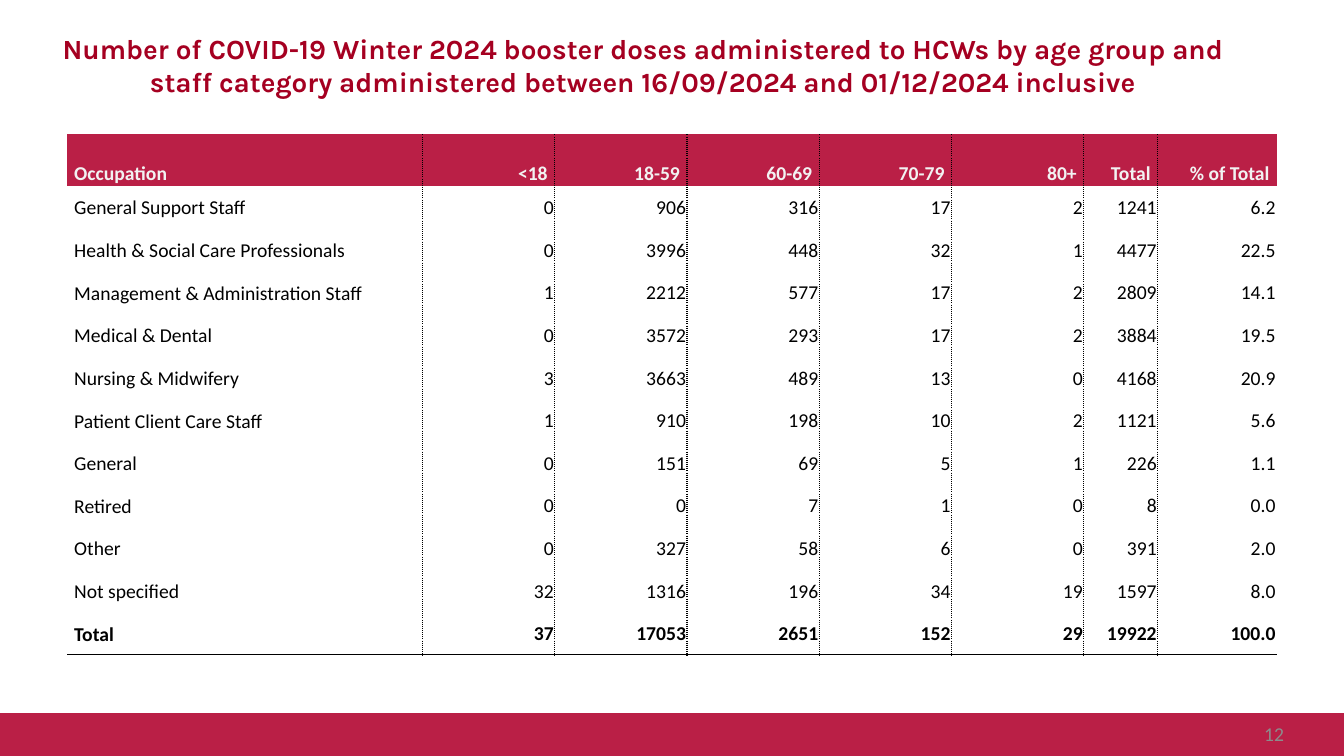
from lxml.etree import SubElement
from pptx import Presentation
from pptx.dml.color import RGBColor
from pptx.enum.shapes import MSO_SHAPE as Shape
from pptx.enum.text import MSO_ANCHOR as Anchor, PP_ALIGN as Align
from pptx.oxml.ns import qn
from pptx.util import Inches, Pt

COLS, ROWS = 160, 90  # square grid, 12 units to the inch
CRIMSON, TITLE_RED, PALE, BLACK, GREY = "BA1F46", "A50021", "F2F2F2", "000000", "8C8C8C"

HEADER = ["Occupation", "<18", "18-59", "60-69", "70-79", "80+", "Total", "% of Total"]
STAFF = [
    ["General Support Staff", 0, 906, 316, 17, 2, 1241, 6.2],
    ["Health & Social Care Professionals", 0, 3996, 448, 32, 1, 4477, 22.5],
    ["Management & Administration Staff", 1, 2212, 577, 17, 2, 2809, 14.1],
    ["Medical & Dental", 0, 3572, 293, 17, 2, 3884, 19.5],
    ["Nursing & Midwifery", 3, 3663, 489, 13, 0, 4168, 20.9],
    ["Patient Client Care Staff", 1, 910, 198, 10, 2, 1121, 5.6],
    ["General", 0, 151, 69, 5, 1, 226, 1.1],
    ["Retired", 0, 0, 7, 1, 0, 8, 0.0],
    ["Other", 0, 327, 58, 6, 0, 391, 2.0],
    ["Not specified", 32, 1316, 196, 34, 19, 1597, 8.0],
    ["Total", 37, 17053, 2651, 152, 29, 19922, 100.0],
]
COL_WIDTHS = [42.3] + [15.75] * 5 + [8.8, 14.15]
HEADER_HEIGHT = 6.15


def rgb(value):
    return RGBColor.from_string(value)


def grid(units):
    return Inches(units / 12)


class Deck:
    def __init__(self):
        self.prs = Presentation()
        self.prs.slide_width, self.prs.slide_height = grid(COLS), grid(ROWS)
        self.s = self.prs.slides.add_slide(self.prs.slide_layouts[6])

    def style(self, p, size, color, font="Calibri", bold=False, align=Align.LEFT):
        p.alignment = align
        f = p.font
        f.size, f.name, f.bold = Pt(size), font, bold
        f.color.rgb = rgb(color)

    def bar(self, x, y, w, h, color):
        sp = self.s.shapes.add_shape(Shape.RECTANGLE, *map(grid, (x, y, w, h)))
        sp.shadow.inherit = False
        sp.fill.solid()
        sp.fill.fore_color.rgb = sp.line.color.rgb = rgb(color)
        sp.line.width = Pt(2)

    def text(self, x, y, w, h, text, **style):
        tf = self.s.shapes.add_textbox(*map(grid, (x, y, w, h))).text_frame
        tf.word_wrap, tf.vertical_anchor = True, Anchor.MIDDLE
        tf.margin_left = tf.margin_right = Inches(0.12)
        tf.margin_top = tf.margin_bottom = Inches(0.06)
        tf.text = text
        self.style(tf.paragraphs[0], **style)

    def borders(self, cell, dashes):
        """Draw the sides named in dashes and hide the others."""
        tc_pr = cell._tc.get_or_add_tcPr()
        for side in "LRTB":
            ln = SubElement(tc_pr, qn(f"a:ln{side}"), w=str(Pt(1)))
            if side in dashes:
                fill = SubElement(ln, qn("a:solidFill"))
                SubElement(fill, qn("a:srgbClr"), val=BLACK)
                SubElement(ln, qn("a:prstDash"), val=dashes[side])
            else:
                SubElement(ln, qn("a:noFill"))

    def cell(self, cell, text, header, label, bold):
        padded = header or label
        cell.margin_left = cell.margin_right = Inches(0.07 if padded else 0.01)
        cell.margin_top = Inches(0 if padded else 0.01)
        cell.margin_bottom = 0
        cell.vertical_anchor = Anchor.BOTTOM if header else Anchor.MIDDLE
        if header:
            cell.fill.solid()
            cell.fill.fore_color.rgb = rgb(CRIMSON)
        else:
            cell.fill.background()
        cell.text = text
        p = cell.text_frame.paragraphs[0]
        if padded:
            p.line_spacing, p.space_after = 1.07, Pt(8)
        self.style(p, 14, PALE if header else BLACK, bold=bold,
                   align=Align.LEFT if label else Align.RIGHT)

    def table(self, x, y, w, h, rows, widths, header_height):
        last_row, last_col = len(rows) - 1, len(widths) - 1
        frame = self.s.shapes.add_table(len(rows), len(widths), *map(grid, (x, y, w, h)))
        tbl = frame.table
        tbl.first_row = tbl.horz_banding = False
        for col, width in zip(tbl.columns, widths):
            col.width = grid(width)
        for i, values in enumerate(rows):
            tbl.rows[i].height = grid(header_height if i == 0 else (h - header_height) / last_row)
            for j, value in enumerate(values):
                dashes = {}
                if j > 0:
                    dashes["L"] = "sysDot"
                if j < last_col:
                    dashes["R"] = "sysDot"
                if i == last_row:
                    dashes["B"] = "solid"
                self.borders(tbl.cell(i, j), dashes)
                self.cell(tbl.cell(i, j), str(value), header=i == 0, label=j == 0,
                          bold=i in (0, last_row))


def main():
    deck = Deck()

    # Footer band
    deck.bar(0, 85, COLS, 5, CRIMSON)

    # Title
    deck.text(3, 1, 147, 13.4,
              "Number of COVID-19 Winter 2024 booster doses administered to HCWs by age group "
              "and staff category administered between 16/09/2024 and 01/12/2024 inclusive",
              size=19.8, color=TITLE_RED, font="Karla", bold=True, align=Align.CENTER)

    # Page number
    deck.text(117, 85, 37.3, 4.8, "12", size=14, color=GREY, align=Align.RIGHT)

    # Doses by occupation and age group
    deck.table(8, 16, 144, 62, [HEADER] + STAFF, COL_WIDTHS, HEADER_HEIGHT)

    deck.prs.save("out.pptx")


if __name__ == "__main__":
    main()
